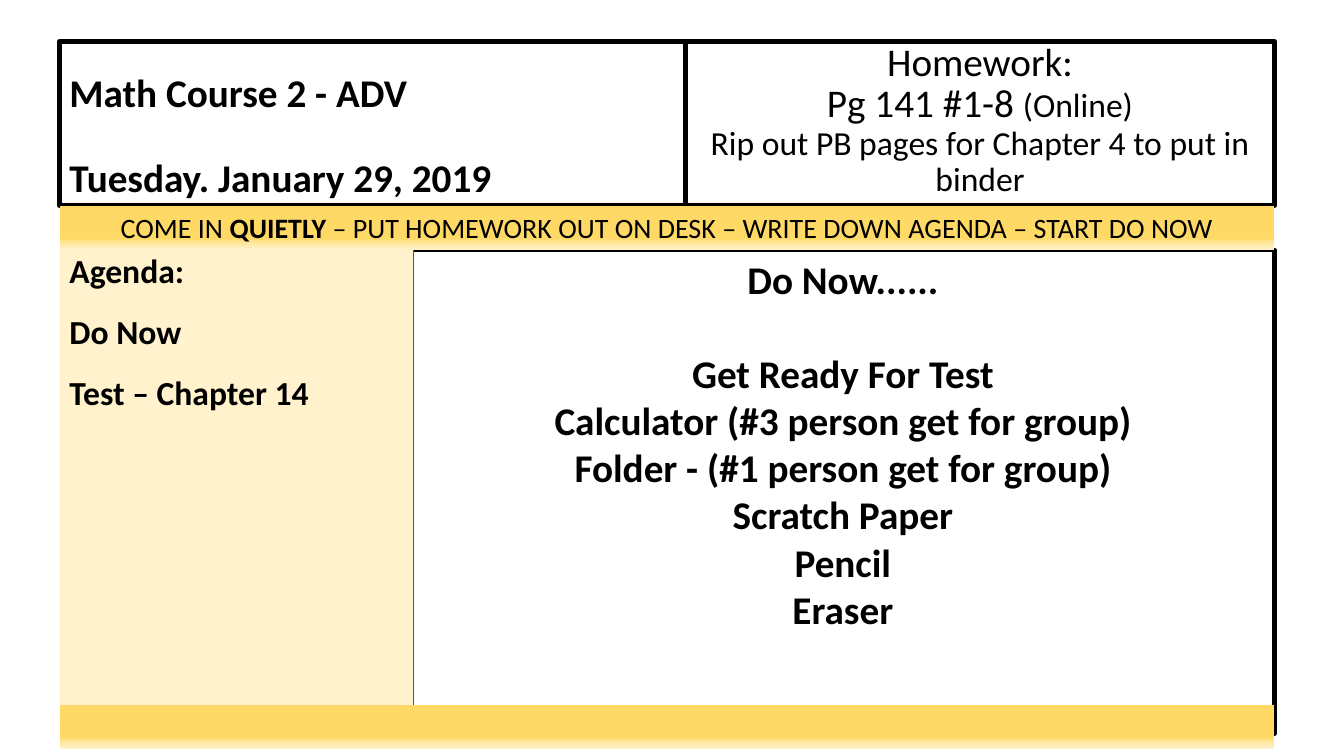
from lxml import etree
from pptx import Presentation
from pptx.dml.color import RGBColor
from pptx.enum.shapes import MSO_SHAPE
from pptx.enum.text import MSO_ANCHOR, PP_ALIGN
from pptx.oxml.ns import qn
from pptx.util import Inches, Pt

RECT = MSO_SHAPE.RECTANGLE
TOP, BOTTOM = MSO_ANCHOR.TOP, MSO_ANCHOR.BOTTOM
LEFT, CENTER = PP_ALIGN.LEFT, PP_ALIGN.CENTER

# Grid edges in inches
COLS = {"left": 0.59, "pane": 4.08, "side": 4.1, "mid": 6.8, "right": 12.64}
ROWS = {"head": 0.41, "band": 2.04, "body": 2.48, "foot": 6.99,
        "side": 7.12, "pane": 7.28, "end": 7.43}
INK, CREAM = "000000", "FFF2CC"
FADE = [(0, "FFD966"), (74, "FFD966"), (83, "FFE699"), (100, CREAM)]


def color(code):
    return RGBColor.from_string(code)


def add_box(slide, left, top, right, bottom, fill=None, line=None):
    """Add a rectangle between named grid edges."""
    x, y = COLS[left], ROWS[top]
    box = slide.shapes.add_shape(RECT, Inches(x), Inches(y),
                                 Inches(COLS[right] - x),
                                 Inches(ROWS[bottom] - y))
    box.shadow.inherit = False
    if fill:
        box.fill.solid()
        box.fill.fore_color.rgb = color(fill)
    else:
        box.fill.background()
    if line:
        box.line.color.rgb = color(INK)
        box.line.width = Pt(line)
    else:
        box.line.fill.background()
    return box


def add_band(slide, top, bottom):
    """Add a full-width bar that fades downwards."""
    band = add_box(slide, "left", top, "right", bottom)
    band.fill.gradient()
    band.fill.gradient_angle = 270
    stops = band._element.spPr.find(".//" + qn("a:gsLst"))
    for stop in list(stops):
        stops.remove(stop)
    for share, code in FADE:
        stop = etree.SubElement(stops, qn("a:gs"), pos=str(share * 1000))
        etree.SubElement(stop, qn("a:srgbClr"), val=code)
    return band


def write(box, paras, align=LEFT, anchor=TOP):
    """Fill a box from (runs, line spacing, space before) paragraphs.

    Each run is (text, size, bold).
    """
    frame = box.text_frame
    frame.word_wrap = True
    frame.vertical_anchor = anchor
    for i, (runs, space, before) in enumerate(paras):
        para = frame.add_paragraph() if i else frame.paragraphs[0]
        para.alignment = align
        para.line_spacing = space
        para.space_before = Pt(before)
        for text, size, bold in runs:
            run = para.add_run()
            run.text = text
            run.font.name = "Calibri"
            run.font.size = Pt(size)
            run.font.bold = bold
            run.font.color.rgb = color(INK)


def main():
    deck = Presentation()
    deck.slide_width, deck.slide_height = Inches(13.33), Inches(7.5)
    slide = deck.slides.add_slide(deck.slide_layouts[6])

    title = add_box(slide, "left", "head", "mid", "band", line=3.25)
    write(title, [([("Math Course 2 - ADV", 28, True)], 0.9, 0),
                  ([("Tuesday. January 29, 2019", 28, True)], 0.9, 30)],
          anchor=BOTTOM)

    work = add_box(slide, "mid", "head", "right", "band", line=3.25)
    task = "Rip out PB pages for Chapter 4 to put in binder"
    write(work, [([("Homework:", 28, False)], 0.8, 0),
                 ([("Pg 141 #1-8 ", 28, False),
                   ("(Online)", 24, False)], 0.9, 0),
                 ([(task, 24, False)], 0.9, 0)], CENTER)

    pane = add_box(slide, "pane", "body", "right", "pane", line=3.25)
    steps = ["Do Now......", "Get Ready For Test",
             "Calculator (#3 person get for group)",
             "Folder - (#1 person get for group)",
             "Scratch Paper", "Pencil", "Eraser"]
    write(pane, [([(step, 28, True)], 1.0, 34 if i == 1 else 0)
                 for i, step in enumerate(steps)], CENTER)

    band = add_band(slide, "band", "body")
    rest = " – PUT HOMEWORK OUT ON DESK – WRITE DOWN AGENDA – START DO NOW"
    write(band, [([("COME IN ", 20, False), ("QUIETLY", 20, True),
                   (rest, 20, False)], 1.0, 0)], CENTER)

    side = add_box(slide, "left", "body", "side", "side", fill=CREAM)
    write(side, [([("Agenda:", 24, True)], 0.9, 0),
                 ([("Do Now", 24, True)], 1.5, 0),
                 ([("Test – Chapter 14", 24, True)], 1.5, 0)])

    add_band(slide, "foot", "end")
    deck.save("out.pptx")


if __name__ == "__main__":
    main()
